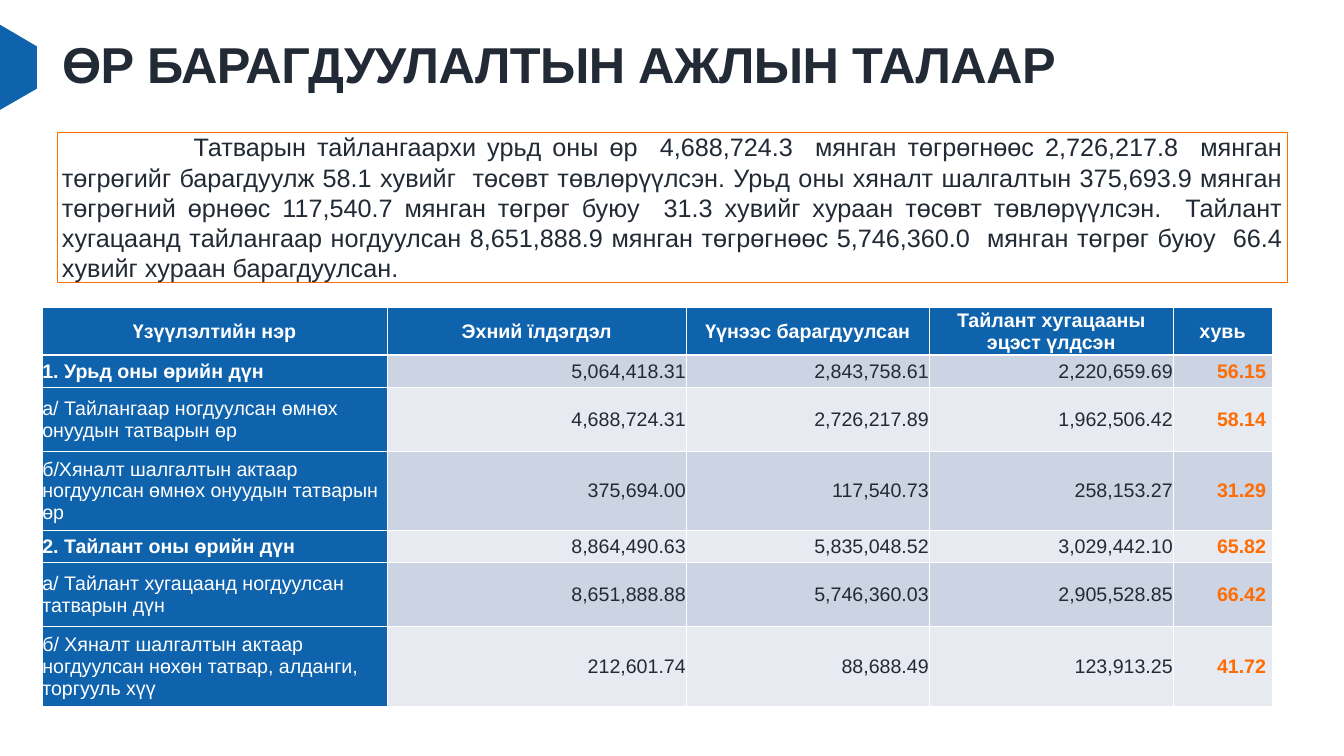
from lxml.etree import SubElement
from pptx import Presentation
from pptx.dml.color import RGBColor
from pptx.enum.shapes import MSO_SHAPE
from pptx.enum.text import MSO_ANCHOR, PP_ALIGN
from pptx.oxml.ns import qn
from pptx.util import Pt

BLUE = RGBColor(0x0F, 0x62, 0xAC)
DARK = RGBColor(0x22, 0x2A, 0x35)
ORANGE = RGBColor(0xFF, 0x6C, 0x04)
WHITE = RGBColor(0xFF, 0xFF, 0xFF)
BANDS = (RGBColor(0xCC, 0xD3, 0xE3), RGBColor(0xE7, 0xEA, 0xF1))
FONT = "Arial"

TITLE = "ӨР БАРАГДУУЛАЛТЫН АЖЛЫН ТАЛААР"
SUMMARY = (
    "Татварын тайлангаархи урьд оны өр  4,688,724.3  мянган төгрөгнөөс "
    "2,726,217.8  мянган төгрөгийг барагдуулж 58.1 хувийг  төсөвт төвлөрүүлсэн. "
    "Урьд оны хяналт шалгалтын 375,693.9 мянган төгрөгний өрнөөс 117,540.7 "
    "мянган төгрөг буюу  31.3 хувийг хураан төсөвт төвлөрүүлсэн.  Тайлант "
    "хугацаанд тайлангаар ногдуулсан 8,651,888.9 мянган төгрөгнөөс 5,746,360.0  "
    "мянган төгрөг буюу  66.4 хувийг хураан барагдуулсан."
)
HEADERS = ("Үзүүлэлтийн нэр", "Эхний їлдэгдэл", "Үүнээс барагдуулсан",
           "Тайлант хугацааны эцэст үлдсэн", "хувь")
DEBTS = (
    ("1. Урьд оны өрийн дүн",
     "5,064,418.31", "2,843,758.61", "2,220,659.69", "56.15"),
    ("а/ Тайлангаар ногдуулсан өмнөх онуудын татварын өр",
     "4,688,724.31", "2,726,217.89", "1,962,506.42", "58.14"),
    ("б/Хяналт шалгалтын актаар ногдуулсан өмнөх онуудын татварын өр",
     "375,694.00", "117,540.73", "258,153.27", "31.29"),
    ("2. Тайлант оны өрийн дүн",
     "8,864,490.63", "5,835,048.52", "3,029,442.10", "65.82"),
    ("а/ Тайлант хугацаанд ногдуулсан татварын дүн",
     "8,651,888.88", "5,746,360.03", "2,905,528.85", "66.42"),
    ("б/ Хяналт шалгалтын актаар ногдуулсан нөхөн татвар, алданги, торгууль хүү",
     "212,601.74", "88,688.49", "123,913.25", "41.72"),
)
COLUMN_WIDTHS = (493.2, 427, 347, 348.5, 141.1)
HEADER_HEIGHT = 68.4
GROUP_HEIGHTS = (45.4, 91.4, 113.8)


def format_paragraph(paragraph, size, color, bold=False, alignment=PP_ALIGN.LEFT):
    """Set the font and alignment of a whole paragraph."""
    font = paragraph.font
    font.name, font.size, font.bold = FONT, Pt(size), bold
    font.color.rgb = color
    paragraph.alignment = alignment


def add_marker(slide):
    """Draw the blue tab at the left edge."""
    builder = slide.shapes.build_freeform(Pt(0), Pt(35.3))
    corners = ((52.6, 66.2), (52.6, 126.7), (0, 157))
    builder.add_line_segments([(Pt(x), Pt(y)) for x, y in corners])
    marker = builder.convert_to_shape()
    marker.shadow.inherit = False
    marker.fill.solid()
    marker.fill.fore_color.rgb = BLUE
    marker.line.fill.background()


def set_title(slide):
    """Place and format the slide title."""
    title = slide.shapes.title
    title.left, title.top = Pt(81.4), Pt(53.3)
    title.width, title.height = Pt(1802), Pt(85.7)
    frame = title.text_frame
    frame.text = TITLE
    frame.vertical_anchor = MSO_ANCHOR.MIDDLE
    paragraph = frame.paragraphs[0]
    format_paragraph(paragraph, 72, DARK, bold=True)
    paragraph.line_spacing = 0.9
    paragraph.runs[0].font._element.set("spc", "-80")


def add_summary(slide):
    """Add the outlined box with the justified summary."""
    box = slide.shapes.add_shape(
        MSO_SHAPE.RECTANGLE, Pt(81.4), Pt(188.6), Pt(1757.5), Pt(215.3))
    box.shadow.inherit = False
    box.fill.solid()
    box.fill.fore_color.rgb = WHITE
    box.line.color.rgb = ORANGE
    box.line.width = Pt(1)
    frame = box.text_frame
    frame.word_wrap = True
    frame.vertical_anchor = MSO_ANCHOR.MIDDLE
    frame.text = SUMMARY
    paragraph = frame.paragraphs[0]
    format_paragraph(paragraph, 36, DARK, alignment=PP_ALIGN.JUSTIFY)
    paragraph._p.get_or_add_pPr().set("indent", str(Pt(188)))


def add_borders(cell, bottom_width):
    """Give a cell white borders, 1 pt except at the bottom."""
    properties = cell._tc.get_or_add_tcPr()
    for side, width in (("L", 1), ("R", 1), ("T", 1), ("B", bottom_width)):
        line = SubElement(properties, qn(f"a:ln{side}"), w=str(Pt(width)))
        fill = SubElement(line, qn("a:solidFill"))
        SubElement(fill, qn("a:srgbClr"), val=str(WHITE))


def fill_cell(cell, text, fill, color, bold, alignment, right=0.7, bottom_width=1):
    """Write and format one table cell."""
    add_borders(cell, bottom_width)
    cell.fill.solid()
    cell.fill.fore_color.rgb = fill
    cell.margin_left = cell.margin_top = Pt(0.7)
    cell.margin_right, cell.margin_bottom = Pt(right), Pt(0)
    cell.vertical_anchor = MSO_ANCHOR.MIDDLE
    cell.text = text
    format_paragraph(cell.text_frame.paragraphs[0], 28, color, bold, alignment)


def add_debt_table(slide):
    """Add the table of debts, with banded number cells."""
    heights = (HEADER_HEIGHT,) + GROUP_HEIGHTS * 2
    table = slide.shapes.add_table(
        len(heights), len(HEADERS), Pt(59.8), Pt(439.2),
        Pt(sum(COLUMN_WIDTHS)), Pt(sum(heights))).table
    for column, width in zip(table.columns, COLUMN_WIDTHS):
        column.width = Pt(width)
    for row, height in zip(table.rows, heights):
        row.height = Pt(height)

    for index, header in enumerate(HEADERS):
        fill_cell(table.cell(0, index), header, BLUE, WHITE, True,
                  PP_ALIGN.CENTER, bottom_width=3)
    for index, (name, *amounts, percent) in enumerate(DEBTS):
        cells = table.rows[index + 1].cells
        band = BANDS[index % 2]
        is_total = index % len(GROUP_HEIGHTS) == 0
        fill_cell(cells[0], name, BLUE, WHITE, is_total, PP_ALIGN.LEFT)
        for column, amount in enumerate(amounts, start=1):
            fill_cell(cells[column], amount, band, DARK, False, PP_ALIGN.RIGHT)
        fill_cell(cells[4], percent, band, ORANGE, True, PP_ALIGN.RIGHT, right=8.5)


def main():
    """Build the slide and save it."""
    presentation = Presentation()
    presentation.slide_width, presentation.slide_height = Pt(1919.5), Pt(1080)
    slide = presentation.slides.add_slide(presentation.slide_layouts[5])
    add_marker(slide)
    set_title(slide)
    add_summary(slide)
    add_debt_table(slide)
    presentation.save("out.pptx")


main()
